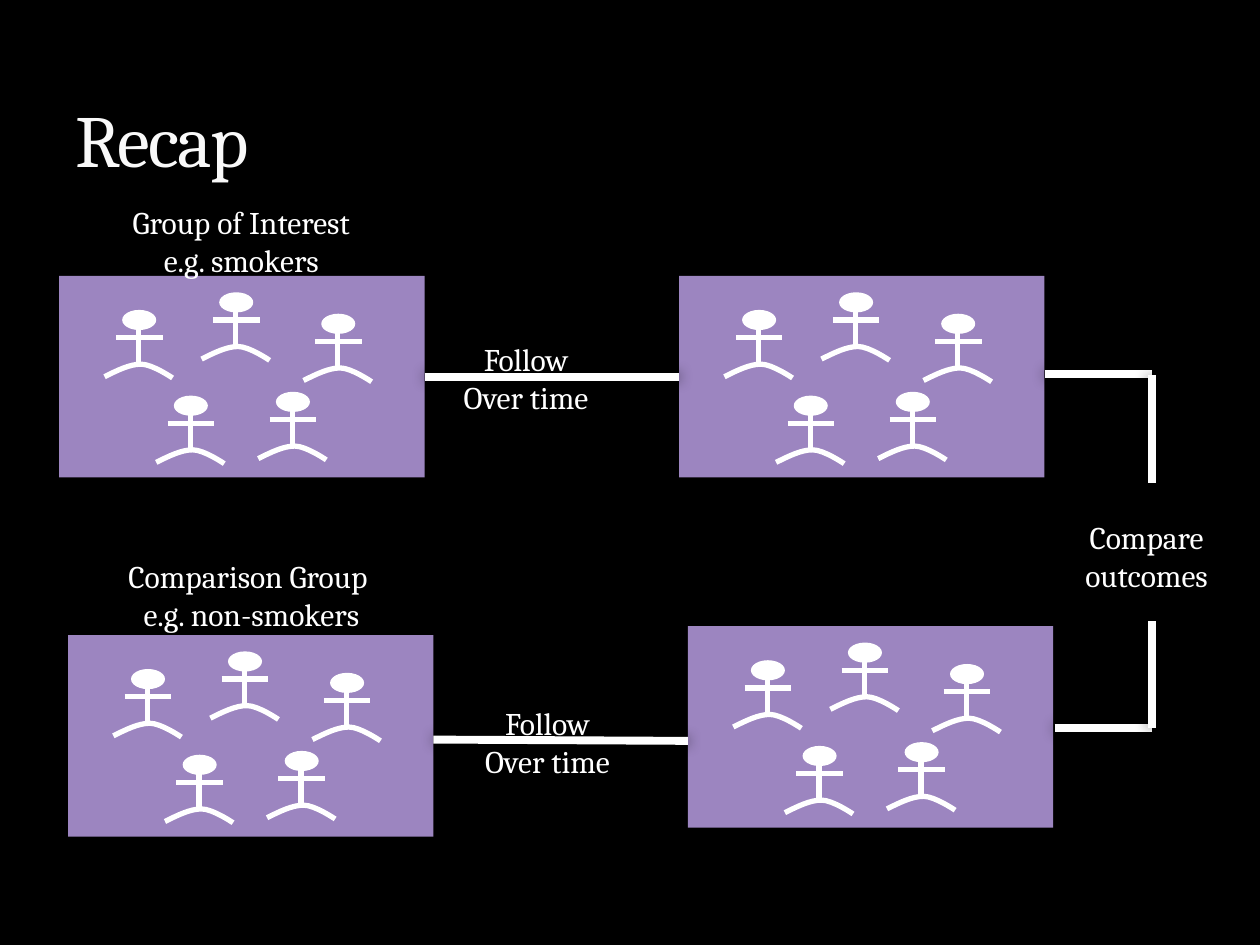
"""Build the recap slide: two groups followed over time and compared."""
from lxml import etree
from pptx import Presentation
from pptx.dml.color import RGBColor
from pptx.enum.shapes import MSO_CONNECTOR, MSO_SHAPE
from pptx.enum.text import MSO_ANCHOR, MSO_AUTO_SIZE, PP_ALIGN
from pptx.oxml.ns import qn
from pptx.util import Inches, Pt

STRAIGHT = MSO_CONNECTOR.STRAIGHT
RECTANGLE = MSO_SHAPE.RECTANGLE
OVAL = MSO_SHAPE.OVAL
BOTTOM = MSO_ANCHOR.BOTTOM
GROW = MSO_AUTO_SIZE.SHAPE_TO_FIT_TEXT
LEFT = PP_ALIGN.LEFT
CENTER = PP_ALIGN.CENTER

FONT = "Cambria"
BLACK, WHITE, PURPLE, TITLE_COLOR = "000000", "FFFFFF", "9C85C0", "F9F9F9"

PANEL_SIZE = (2.9, 1.6)
PANELS = [(0.47, 2.19), (5.46, 4.97), (5.39, 2.19), (0.54, 5.04)]
PEOPLE = [(0.5, 0.27), (1.27, 0.13), (0.91, 0.95), (1.72, 0.92), (2.08, 0.3)]
LEG_POINTS = [
    (-0.14, 0.53), (-0.04, 0.48), (0.06, 0.43), (0.15, 0.43),
    (0.24, 0.43), (0.4, 0.54), (0.4, 0.54),
]
LINKS = [
    (3.37, 2.99, 5.39, 2.99),
    (3.44, 5.87, 5.46, 5.88),
    (8.29, 2.97, 9.14, 2.97),
    (8.37, 5.78, 9.14, 5.78),
    (9.14, 3.83, 9.14, 2.98),
    (9.14, 5.78, 9.14, 4.93),
]
LABELS = [
    (0.47, 1.56, 2.89, "Group of Interest\ne.g. smokers"),
    (0.55, 4.37, 2.89, "Comparison Group \ne.g. non-smokers"),
    (2.73, 2.65, 2.89, "Follow\nOver time"),
    (2.9, 5.54, 2.89, "Follow\nOver time"),
    (8.28, 4.06, 1.64, "Compare outcomes"),
]


def color(value):
    """Return the colour for a hex string."""
    return RGBColor.from_string(value)


def format_text(text_frame, size, text_color, alignment):
    """Apply one font and alignment to all text in a frame."""
    for paragraph in text_frame.paragraphs:
        paragraph.alignment = alignment
        for run in paragraph.runs:
            run.font.name = FONT
            run.font.size = Pt(size)
            run.font.color.rgb = color(text_color)


def add_title(slide, text):
    """Place and format the title placeholder."""
    title = slide.shapes.title
    title.left, title.top = Inches(0.5), Inches(0.17)
    title.width, title.height = Inches(9), Inches(1.33)
    text_frame = title.text_frame
    text_frame.text = text
    text_frame.vertical_anchor = BOTTOM
    format_text(text_frame, 42, TITLE_COLOR, LEFT)
    text_frame.paragraphs[0].runs[0].font._element.set("spc", "-100")


def add_filled_shape(group, kind, left, top, width, height, fill):
    """Add a plain filled shape without an outline."""
    shape = group.shapes.add_shape(
        kind, Inches(left), Inches(top), Inches(width), Inches(height)
    )
    shape.shadow.inherit = False
    shape.fill.solid()
    shape.fill.fore_color.rgb = color(fill)
    shape.line.fill.background()


def add_line(group, start_x, start_y, end_x, end_y, width):
    """Add a white straight line and return its empty effect list."""
    line = group.shapes.add_connector(
        STRAIGHT, Inches(start_x), Inches(start_y), Inches(end_x), Inches(end_y)
    )
    line.line.color.rgb = color(WHITE)
    line.line.width = Pt(width)
    return etree.SubElement(line._element.spPr, qn("a:effectLst"))


def add_link(group, start_x, start_y, end_x, end_y):
    """Add a thick line with a soft dark shadow."""
    effects = add_line(group, start_x, start_y, end_x, end_y, 4.5)
    shadow = etree.SubElement(effects, qn("a:outerShdw"), blurRad=str(Pt(7.5)))
    shade = etree.SubElement(shadow, qn("a:srgbClr"), val=BLACK)
    etree.SubElement(shade, qn("a:alpha"), val="50000")


def curve_segments(shape):
    """Turn each three straight segments of an outline into a cubic curve."""
    segments = list(shape._element.iter(qn("a:lnTo")))
    for first in range(0, len(segments), 3):
        curve = etree.Element(qn("a:cubicBezTo"))
        segments[first].addprevious(curve)
        for segment in segments[first:first + 3]:
            curve.append(segment[0])
            segment.getparent().remove(segment)


def add_legs(group, left, top):
    """Draw the curved legs of a person as an open outline."""
    points = [(Inches(left + x), Inches(top + y)) for x, y in LEG_POINTS]
    builder = group.shapes.build_freeform(*points[0])
    builder.add_line_segments(points[1:], close=False)
    legs = builder.convert_to_shape()
    curve_segments(legs)
    legs.shadow.inherit = False
    legs.fill.background()
    legs.line.color.rgb = color(WHITE)
    legs.line.width = Pt(3)


def add_person(group, left, top):
    """Draw a stick person from the top left corner of the head."""
    add_line(group, left + 0.13, top + 0.13, left + 0.13, top + 0.43, 3)
    add_line(group, left - 0.05, top + 0.22, left + 0.32, top + 0.22, 3)
    add_filled_shape(group, OVAL, left, top, 0.27, 0.16, WHITE)
    add_legs(group, left, top)


def add_panel(diagram, left, top):
    """Draw a coloured panel holding a group of people."""
    panel = diagram.shapes.add_group_shape()
    add_filled_shape(panel, RECTANGLE, left, top, *PANEL_SIZE, PURPLE)
    for offset_x, offset_y in PEOPLE:
        add_person(panel, left + offset_x, top + offset_y)


def add_label(group, left, top, width, text):
    """Add a centred white text box."""
    label = group.shapes.add_textbox(
        Inches(left), Inches(top), Inches(width), Inches(0.71)
    )
    label.text_frame.word_wrap = True
    label.text_frame.auto_size = GROW
    label.text_frame.text = text
    format_text(label.text_frame, 18, WHITE, CENTER)


def main():
    """Create and save the presentation."""
    presentation = Presentation()
    presentation.slide_width = Inches(10)
    presentation.slide_height = Inches(7.5)
    slide = presentation.slides.add_slide(presentation.slide_layouts[5])
    slide.background.fill.solid()
    slide.background.fill.fore_color.rgb = color(BLACK)
    add_title(slide, "Recap")
    diagram = slide.shapes.add_group_shape()
    for panel in PANELS:
        add_panel(diagram, *panel)
    for link in LINKS:
        add_link(diagram, *link)
    for label in LABELS:
        add_label(diagram, *label)
    presentation.save("out.pptx")


if __name__ == "__main__":
    main()
